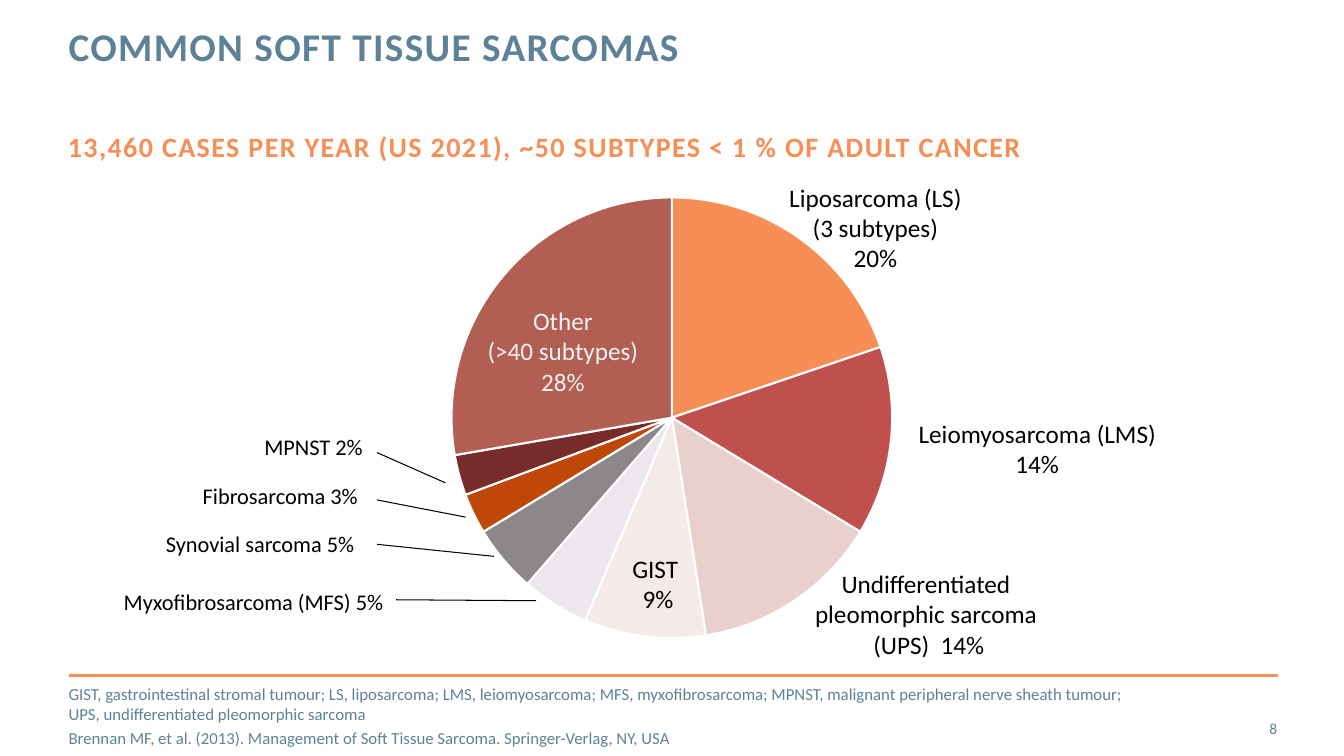
import pptx
import pptx.chart.data
import pptx.dml.color
import pptx.enum.chart
import pptx.enum.shapes
import pptx.enum.text
import pptx.oxml
import pptx.oxml.ns
import pptx.util
from lxml import etree

Pt = pptx.util.Pt
RGBColor = pptx.dml.color.RGBColor
ALIGN = pptx.enum.text.PP_ALIGN
ANCHOR = pptx.enum.text.MSO_ANCHOR

FONT = "Calibri"
ORANGE = RGBColor(0xF7, 0x8E, 0x56)
BLUE = RGBColor(0x5D, 0x82, 0x98)
BLACK = RGBColor(0x00, 0x00, 0x00)
WHITE = RGBColor(0xFF, 0xFF, 0xFF)
PALE = RGBColor(0xF2, 0xF2, 0xF2)

# Cases per subtype and slice colour, clockwise from the top
SLICES = [
    (20, ORANGE),
    (14, RGBColor(0xC0, 0x50, 0x4D)),
    (14, RGBColor(0xE9, 0xD0, 0xCD)),
    (9, RGBColor(0xF4, 0xEA, 0xE7)),
    (5, RGBColor(0xEC, 0xE6, 0xED)),
    (5, RGBColor(0x8B, 0x87, 0x8B)),
    (3, RGBColor(0xBF, 0x48, 0x09)),
    (3, RGBColor(0x77, 0x2C, 0x2A)),
    (28, RGBColor(0xB3, 0x5E, 0x53)),
]

# Left, top, width, text size, colour, lines
LABELS = [
    (555.8, 126.7, 139, 18, BLACK, ["Liposarcoma (LS)", "(3 subtypes)", "20%"]),
    (648, 295.2, 185.8, 18, BLACK, ["Leiomyosarcoma (LMS)", "14%"]),
    (573.8, 402.5, 179.3, 18, BLACK,
     ["Undifferentiated ", "pleomorphic sarcoma ", "(UPS)  14%"]),
    (444.2, 391.7, 51.8, 18, BLACK, ["GIST ", "9%"]),
    (339.8, 214.6, 124.6, 18, PALE, ["Other", "(>40 subtypes)", "28%"]),
    (180, 306, 87.8, 16, BLACK, ["MPNST 2%"]),
    (136.1, 340.6, 128.2, 16, BLACK, ["Fibrosarcoma 3%"]),
    (108.7, 375.1, 154.1, 16, BLACK, ["Synovial sarcoma 5%"]),
    (79.2, 416.2, 203.8, 16, BLACK, ["Myxofibrosarcoma (MFS) 5%"]),
]

# Start x, start y, end x, end y
LEADERS = [
    (269.3, 323.3, 318.2, 344.9),
    (269.3, 357.1, 332.6, 369.4),
    (269.3, 388.8, 352.8, 397.4),
    (283, 428.4, 383, 429.1),
]

FOOTNOTES = [
    "GIST, gastrointestinal stromal tumour; LS, liposarcoma; LMS, leiomyosarcoma; "
    "MFS, myxofibrosarcoma; MPNST, malignant peripheral nerve sheath tumour; \v"
    "UPS, undifferentiated pleomorphic sarcoma",
    "Brennan MF, et al. (2013). Management of Soft Tissue Sarcoma. "
    "Springer-Verlag, NY, USA",
]


def write_text(shape, lines, size, color, bold=False, align=ALIGN.LEFT,
               anchor=ANCHOR.TOP, wrap=True, inset=True, tracking=0,
               gap=0, line_spacing=None):
    frame = shape.text_frame
    frame.word_wrap = wrap
    frame.auto_size = pptx.enum.text.MSO_AUTO_SIZE.NONE
    frame.vertical_anchor = anchor
    if not inset:
        frame.margin_left = frame.margin_right = Pt(0)
        frame.margin_top = frame.margin_bottom = Pt(0)
    for index, line in enumerate(lines):
        paragraph = frame.add_paragraph() if index else frame.paragraphs[0]
        paragraph.text = line
        paragraph.alignment = align
        paragraph.space_before = Pt(gap if index else 0)
        if line_spacing:
            paragraph.line_spacing = Pt(line_spacing)
        for run in paragraph.runs:
            run.font.name = FONT
            run.font.size = Pt(size)
            run.font.bold = bold
            run.font.color.rgb = color
            if tracking:
                run._r.get_or_add_rPr().set("spc", str(tracking * 100))


def add_text(slide, left, top, width, height, lines, **text_format):
    box = slide.shapes.add_textbox(Pt(left), Pt(top), Pt(width), Pt(height))
    write_text(box, lines, **text_format)


def add_line(slide, start_x, start_y, end_x, end_y, color, width):
    line = slide.shapes.add_connector(
        pptx.enum.shapes.MSO_CONNECTOR.STRAIGHT,
        Pt(start_x), Pt(start_y), Pt(end_x), Pt(end_y))
    line.line.color.rgb = color
    line.line.width = Pt(width)
    etree.SubElement(line._element.spPr, pptx.oxml.ns.qn("a:effectLst"))


def add_label(slide, left, top, width, size, color, lines):
    height = len(lines) * size * 1.2 + 7.2
    add_text(slide, left, top, width, height, lines, size=size, color=color,
             align=ALIGN.CENTER, wrap=False)


def set_plot_layout(chart, x, y, w, h):
    plot_area = chart._chartSpace.chart.plotArea
    for layout in plot_area.findall(pptx.oxml.ns.qn("c:layout")):
        plot_area.remove(layout)
    fractions = "".join(f'<c:{name} val="{value}"/>' for name, value in
                        zip("xywh", (x, y, w, h)))
    plot_area.insert(0, pptx.oxml.parse_xml(
        f'<c:layout {pptx.oxml.ns.nsdecls("c")}><c:manualLayout>'
        '<c:layoutTarget val="inner"/><c:xMode val="edge"/>'
        f'<c:yMode val="edge"/>{fractions}</c:manualLayout></c:layout>'))


def add_pie(slide, left, top, width, height):
    data = pptx.chart.data.CategoryChartData()
    data.categories = [str(number) for number in range(1, len(SLICES) + 1)]
    data.add_series("Series 1", [value for value, _ in SLICES])
    chart = slide.shapes.add_chart(
        pptx.enum.chart.XL_CHART_TYPE.PIE,
        Pt(left), Pt(top), Pt(width), Pt(height), data).chart
    chart.has_title = False
    chart.has_legend = False
    chart.font.name = FONT
    chart.font.size = Pt(10)
    chart.font.color.rgb = BLACK
    plot = chart.plots[0]
    plot.vary_by_categories = True
    for index, (_, color) in enumerate(SLICES):
        point_format = plot.series[0].points[index].format
        point_format.fill.solid()
        point_format.fill.fore_color.rgb = color
        point_format.line.color.rgb = WHITE
        point_format.line.width = Pt(1.5)
    set_plot_layout(chart, 0.18, 0.03, 0.64, 0.94)


def main():
    presentation = pptx.Presentation()
    presentation.slide_width, presentation.slide_height = Pt(960), Pt(540)
    slide = presentation.slides.add_slide(presentation.slide_layouts[5])

    # Title and subtitle
    title = slide.shapes.title
    title.left, title.top = Pt(49), Pt(19.4)
    title.width, title.height = Pt(688), Pt(63.4)
    write_text(title, ["COMMON SOFT TISSUE SARCOMAS"], size=28, color=BLUE,
               bold=True, inset=False, tracking=1, line_spacing=30)
    add_text(slide, 48.5, 92.2, 864, 55.4,
             ["13,460 CASES PER YEAR (US 2021), ~50 SUBTYPES < 1 % OF ADULT CANCER"],
             size=20, color=ORANGE, bold=True, inset=False, tracking=1)

    # Pie with its labels and leader lines
    add_pie(slide, 234, 130.3, 491.8, 336.2)
    for label in LABELS:
        add_label(slide, *label)
    for leader in LEADERS:
        add_line(slide, *leader, color=BLACK, width=0.75)

    # Footer
    add_line(slide, 49, 482.4, 913, 482.4, color=ORANGE, width=2)
    add_text(slide, 49, 496.8, 845.3, 28.8, FOOTNOTES, size=12, color=BLUE,
             anchor=ANCHOR.MIDDLE, inset=False, gap=3)
    add_text(slide, 850.3, 506.2, 62, 28.8, ["8"], size=11, color=BLUE,
             align=ALIGN.RIGHT, anchor=ANCHOR.MIDDLE, inset=False)

    presentation.save("out.pptx")


if __name__ == "__main__":
    main()
